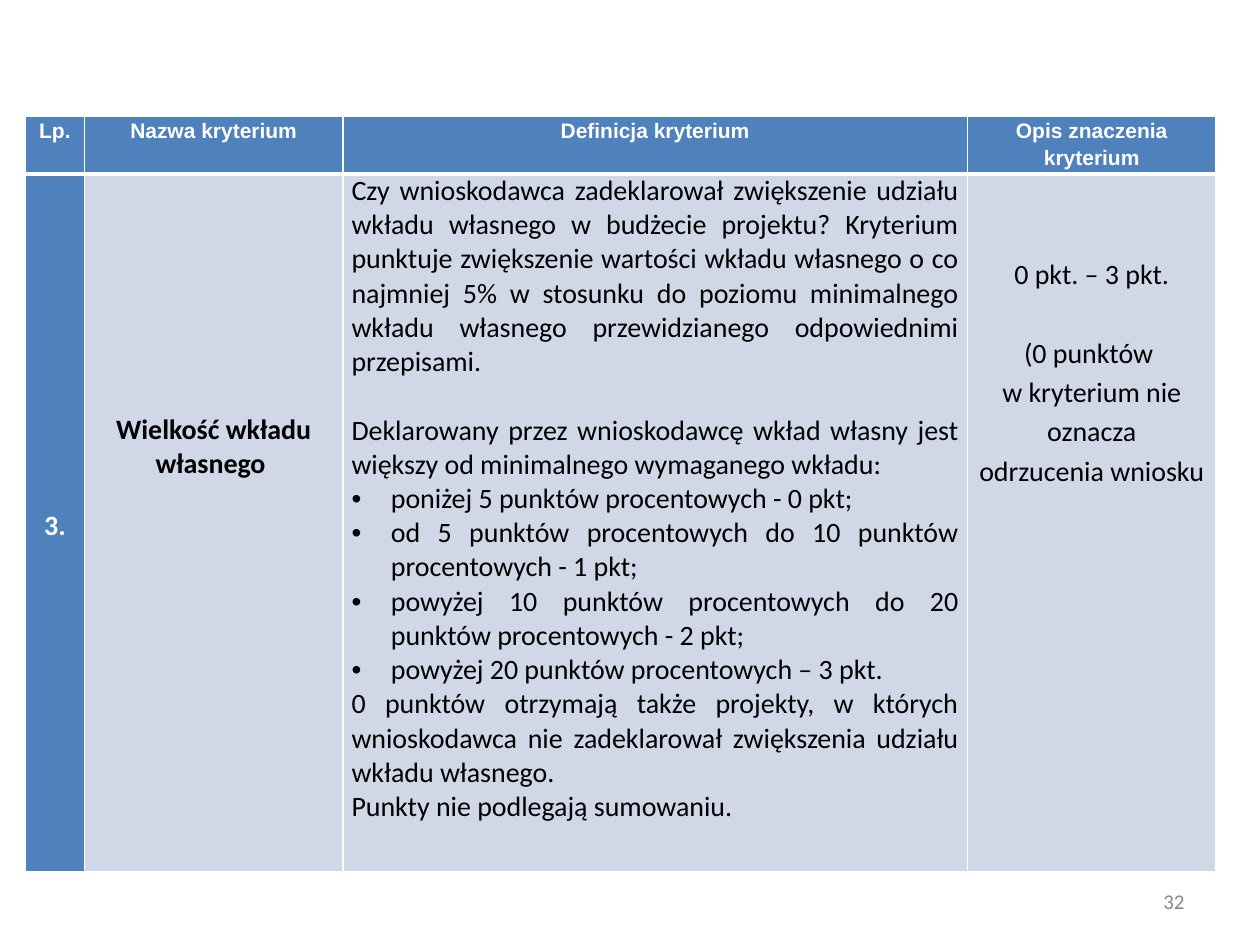
from lxml import etree
from pptx import Presentation
from pptx import util as u
from pptx.dml.color import RGBColor
from pptx.enum import text
from pptx.oxml import ns

Pt = u.Pt
COLORS = {"white": "FFFFFF", "blue": "4F81BD", "pale": "D0D8E8",
          "black": "000000", "grey": "898989"}
CENTER, JUSTIFY, RIGHT = (text.PP_ALIGN.CENTER, text.PP_ALIGN.JUSTIFY,
                          text.PP_ALIGN.RIGHT)
COLUMN_WIDTHS = [34, 147.5, 357, 142]
ROW_HEIGHTS = [21, 399]
BODY_LINE = 19.5
LOOSE_LINE = 22.5

HEADERS = ["Lp.", "Nazwa kryterium", "Definicja kryterium",
           "Opis znaczenia kryterium"]
# Each entry: wording and its paragraph format
DEFINITION = [
    ("Czy wnioskodawca zadeklarował zwiększenie udziału wkładu własnego w "
     "budżecie projektu? Kryterium punktuje zwiększenie wartości wkładu "
     "własnego o co najmniej 5% w stosunku do poziomu minimalnego wkładu "
     "własnego przewidzianego odpowiednimi przepisami.", {}),
    ("Deklarowany przez wnioskodawcę wkład własny jest większy od "
     "minimalnego wymaganego wkładu:", {"before": BODY_LINE}),
    ("poniżej 5 punktów procentowych - 0 pkt;", {"bullet": True}),
    ("od 5 punktów procentowych do 10 punktów procentowych - 1 pkt;",
     {"bullet": True}),
    ("powyżej 10 punktów procentowych do 20 punktów procentowych - 2 pkt;",
     {"bullet": True}),
    ("powyżej 20 punktów procentowych – 3 pkt.", {"bullet": True}),
    ("0 punktów otrzymają także projekty, w których wnioskodawca nie "
     "zadeklarował zwiększenia udziału wkładu własnego.", {}),
    ("Punkty nie podlegają sumowaniu.", {}),
]
MEANING = [
    ("0 pkt. – 3 pkt.", {}),
    ("(0 punktów \vw kryterium nie oznacza", {"before": LOOSE_LINE}),
    ("odrzucenia wniosku", {}),
]


def color(name):
    return RGBColor.from_string(COLORS[name])


def add_bullet(para, indent=22.5):
    props = para._p.get_or_add_pPr()
    props.set("marL", str(Pt(indent)))
    props.set("indent", str(-Pt(indent)))
    font = etree.SubElement(props, ns.qn("a:buFont"))
    font.set("typeface", "Arial")
    mark = etree.SubElement(props, ns.qn("a:buChar"))
    mark.set("char", "•")


def write(para, words, *, size=16, font="Calibri", ink="black", bold=False,
          align=CENTER, spacing=None, before=None, after=None, bullet=False):
    """Fill one paragraph and format it."""
    para.text = words
    if bullet:
        add_bullet(para)
    para.alignment = align
    if spacing is not None:
        para.line_spacing = spacing
    if before is not None:
        para.space_before = Pt(before)
    if after is not None:
        para.space_after = Pt(after)
    for span in para.runs:
        span.font.size = Pt(size)
        span.font.name = font
        span.font.bold = bold
        span.font.color.rgb = color(ink)


def write_all(cell, entries, **common):
    frame = cell.text_frame
    for index, (words, extra) in enumerate(entries):
        para = frame.add_paragraph() if index else frame.paragraphs[0]
        write(para, words, **{**common, **extra})


def set_borders(cell, top=1, bottom=1):
    props = cell._tc.get_or_add_tcPr()
    widths = {"lnL": 1, "lnR": 1, "lnT": top, "lnB": bottom}
    for index, (side, width) in enumerate(widths.items()):
        line = etree.Element(ns.qn("a:" + side), w=str(Pt(width)))
        fill = etree.SubElement(line, ns.qn("a:solidFill"))
        etree.SubElement(fill, ns.qn("a:srgbClr"), val=COLORS["white"])
        props.insert(index, line)


def style_cell(cell, fill, *, margin_top=0, middle=False, **borders):
    cell.fill.solid()
    cell.fill.fore_color.rgb = color(fill)
    cell.margin_left = cell.margin_right = Pt(5)
    cell.margin_top, cell.margin_bottom = Pt(margin_top), Pt(0)
    cell.vertical_anchor = (text.MSO_ANCHOR.MIDDLE if middle
                            else text.MSO_ANCHOR.TOP)
    set_borders(cell, **borders)


def add_criteria_table(page):
    frame = page.shapes.add_table(
        len(ROW_HEIGHTS), len(COLUMN_WIDTHS), Pt(14.4), Pt(66.2),
        Pt(sum(COLUMN_WIDTHS)), Pt(sum(ROW_HEIGHTS)))
    table = frame.table
    table.horz_banding = False
    for column, width in zip(table.columns, COLUMN_WIDTHS):
        column.width = Pt(width)
    for row, height in zip(table.rows, ROW_HEIGHTS):
        row.height = Pt(height)

    # Header row
    for index, words in enumerate(HEADERS):
        cell = table.cell(0, index)
        style_cell(cell, "blue", bottom=3)
        write_all(cell, [(words, {})], size=12, font="Arial", ink="white",
                  bold=True, spacing=1.15, after=10)

    # Criterion row
    number, name, definition, meaning = table.rows[1].cells
    style_cell(number, "blue", middle=True, top=3)
    write_all(number, [("3.", {})], ink="white", bold=True, spacing=1.15,
              after=10)
    style_cell(name, "pale", margin_top=7 * BODY_LINE, top=3)
    write_all(name, [("Wielkość wkładu własnego ", {})], bold=True)
    style_cell(definition, "pale", top=3)
    write_all(definition, DEFINITION, align=JUSTIFY)
    style_cell(meaning, "pale", margin_top=2 * LOOSE_LINE, top=3)
    write_all(meaning, MEANING, spacing=1.15)


def add_page_number(page, number):
    box = page.shapes.add_textbox(Pt(516), Pt(500.5), Pt(168), Pt(28.75))
    frame = box.text_frame
    frame.word_wrap = True
    frame.vertical_anchor = text.MSO_ANCHOR.MIDDLE
    write(frame.paragraphs[0], number, size=12, ink="grey", align=RIGHT)


def main():
    deck = Presentation()
    deck.slide_width, deck.slide_height = Pt(720), Pt(540)
    page = deck.slides.add_slide(deck.slide_layouts[6])
    add_page_number(page, "32")
    add_criteria_table(page)
    deck.save("out.pptx")


if __name__ == "__main__":
    main()
